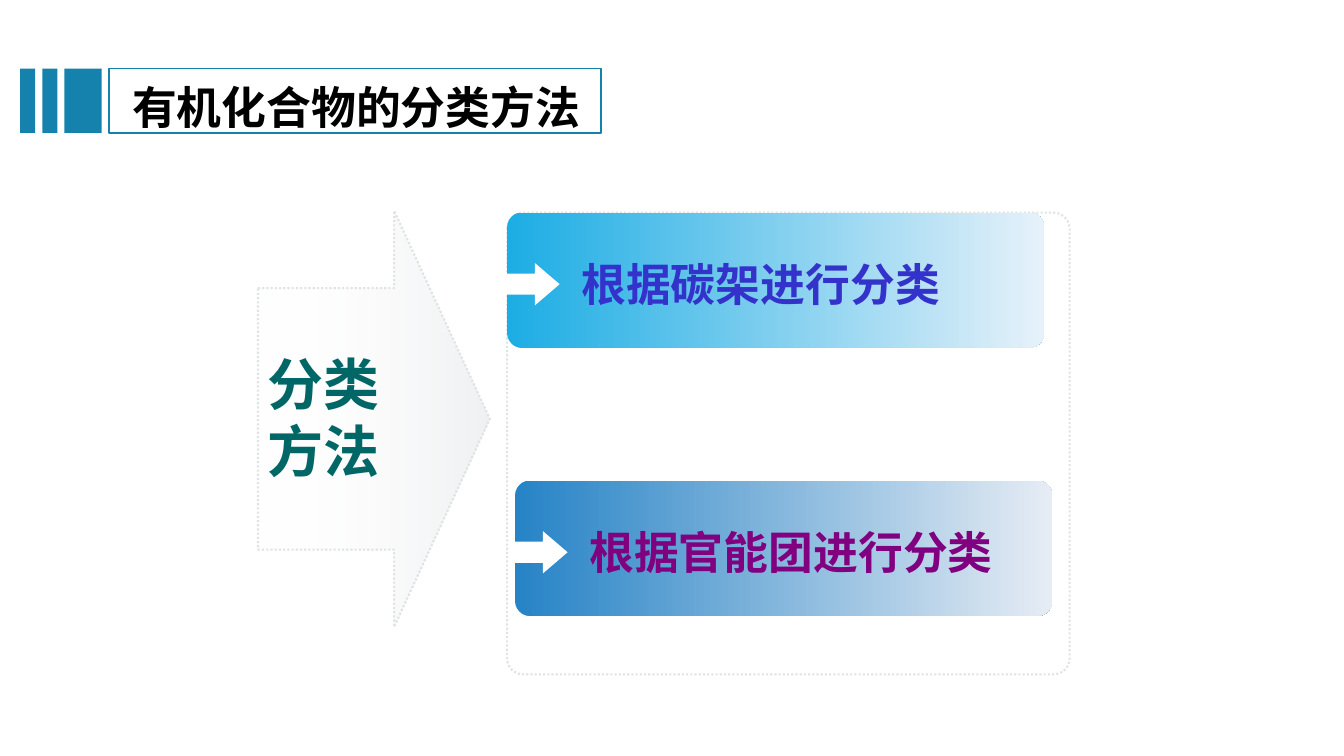
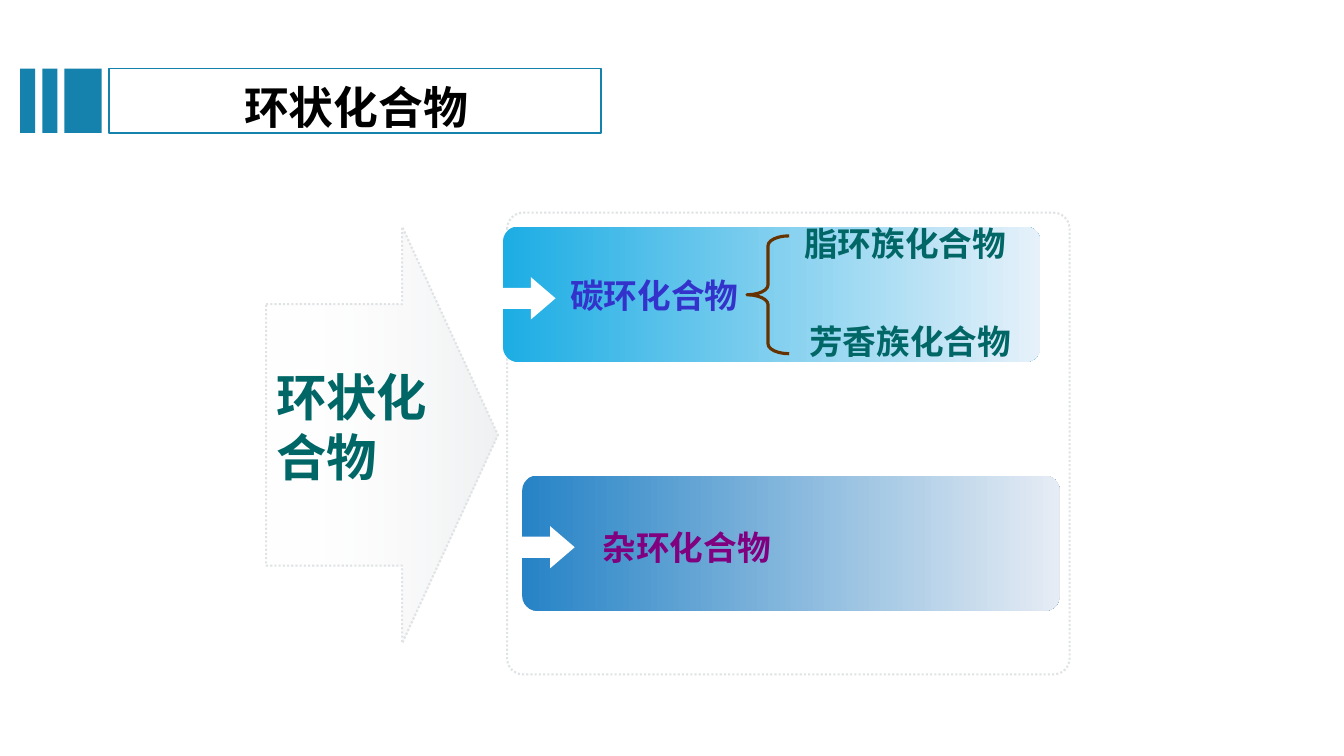
"""Build two slides on how organic compounds are classified."""
from dataclasses import dataclass

from lxml.etree import SubElement
from pptx import Presentation
from pptx.dml.color import RGBColor as Color
from pptx.enum.dml import MSO_LINE as Dash
from pptx.enum.shapes import MSO_SHAPE as Kind
from pptx.enum.text import MSO_ANCHOR as Anchor, MSO_AUTO_SIZE as AutoSize, PP_ALIGN as Align
from pptx.oxml.ns import qn
from pptx.util import Pt


@dataclass(frozen=True)
class Theme:
    font: str = "Arial"
    band: str = "1482AC"
    title: str = "000000"
    white: str = "FFFFFF"
    outline: str = "DFE3E5"
    teal: str = "006666"
    brace: str = "663300"
    card_gradients: tuple = (("1CADE4", "E6F1FA"), ("2683C6", "E6ECF4"))
    card_texts: tuple = ("3333CC", "800080")
    title_size: int = 32
    label_size: int = 24


THEME = Theme()


def write_text(shape, text, size, color, align=Align.LEFT, spacing=None, wrap=True):
    frame = shape.text_frame
    frame.text = text
    frame.word_wrap = wrap
    frame.auto_size = AutoSize.NONE
    frame.vertical_anchor = Anchor.TOP
    for paragraph in frame.paragraphs:
        paragraph.alignment = align
        if spacing:
            paragraph.line_spacing = spacing
        font = paragraph.runs[0].font
        font.name, font.size, font.bold = THEME.font, Pt(size), True
        font.color.rgb = Color.from_string(color)


def draw_shape(shapes, kind, box, fill=None, gradient=None, line=None, width=1.5, dash=None, adjust=()):
    shape = shapes.add_shape(kind, *map(Pt, box))
    shape.shadow.inherit = False
    for index, value in enumerate(adjust):
        shape.adjustments[index] = value
    if gradient:
        shape.fill.gradient()
        shape.fill.gradient_angle = 0
        for stop, color in zip(shape.fill.gradient_stops, gradient):
            stop.color.rgb = Color.from_string(color)
    elif fill:
        shape.fill.solid()
        shape.fill.fore_color.rgb = Color.from_string(fill)
    else:
        shape.fill.background()
    if line:
        shape.line.color.rgb = Color.from_string(line)
        shape.line.width = Pt(width)
        if dash:
            shape.line.dash_style = dash
    else:
        shape.line.fill.background()
    return shape


SLIDES = [
    {
        "title": "有机化合物的分类方法",
        "arrow": (184.3, 150.5, "分类\n方法", 40),
        "card_size": 32,
        "cards": [
            (362.2, 151.9, "根据碳架进行分类", 46, 28),
            (367.9, 343.4, "根据官能团进行分类", 46, 28),
        ],
        "branches": [],
    },
    {
        "title": "环状化合物",
        "arrow": (190.1, 162, "环状化合物", 36),
        "card_size": 24,
        "cards": [
            (359.3, 162, "碳环化合物", 41, 31),
            (373, 339.8, "杂环化合物", 50.4, 33),
        ],
        "branches": [(567.4, 155.5, "脂环族化合物"), (571, 225.4, "芳香族化合物")],
    },
]

presentation = Presentation()
presentation.slide_width, presentation.slide_height = Pt(960), Pt(540)

for content in SLIDES:
    slide = presentation.slides.add_slide(presentation.slide_layouts[5])

    title = slide.shapes.title
    title.left, title.top, title.width, title.height = map(Pt, (79.9, 45.4, 349.2, 49.7))
    write_text(title, content["title"], THEME.title_size, THEME.title, Align.CENTER, spacing=1.2)
    header = slide.shapes.add_group_shape().shapes
    draw_shape(header, Kind.RECTANGLE, (77.8, 49, 351.4, 46), line=THEME.band, width=1.25)
    for left, width in ((14.4, 10.8), (30.2, 10.8), (46.1, 26.6)):
        draw_shape(header, Kind.RECTANGLE, (left, 49, width, 46), fill=THEME.band)

    left, top, text, size = content["arrow"]
    topic = slide.shapes.add_group_shape().shapes
    arrow = draw_shape(topic, Kind.RIGHT_ARROW, (left, top, 165.6, 297.4),
                       gradient=(THEME.white, THEME.outline), line=THEME.outline,
                       dash=Dash.ROUND_DOT, adjust=(0.628, 0.413))
    stop_colors = arrow.fill._xPr.iter(qn("a:gs"))
    for stop, alpha in zip(stop_colors, ("0", "50000")):
        SubElement(stop[0], qn("a:alpha")).set("val", alpha)
    label = topic.add_textbox(Pt(left), Pt(top + 95.8), Pt(157.6), Pt(104))
    write_text(label, text, size, THEME.teal)

    draw_shape(slide.shapes, Kind.ROUNDED_RECTANGLE, (362.2, 151.9, 401.8, 329.8),
               line=THEME.outline, dash=Dash.ROUND_DOT, adjust=(0.035,))

    for card, gradient, color in zip(content["cards"], THEME.card_gradients, THEME.card_texts):
        left, top, text, indent, drop = card
        group = slide.shapes.add_group_shape().shapes
        draw_shape(group, Kind.ROUNDED_RECTANGLE, (left, top, 383.8, 96.5),
                   gradient=gradient, adjust=(0.109,))
        draw_shape(group, Kind.RIGHT_ARROW, (left - 4.3, top + 36, 41.8, 30.2),
                   fill=THEME.white, adjust=(0.5, 0.583))
        label = group.add_textbox(Pt(left + indent), Pt(top + drop), Pt(317.5), Pt(46))
        write_text(label, text, content["card_size"], color)

    if content["branches"]:
        draw_shape(slide.shapes, Kind.LEFT_BRACE, (533.5, 168.5, 30.2, 84.2),
                   line=THEME.brace, width=2.25, adjust=(0.233, 0.5))
    for left, top, text in content["branches"]:
        label = slide.shapes.add_textbox(Pt(left), Pt(top), Pt(159), Pt(36))
        write_text(label, text, THEME.label_size, THEME.teal, wrap=False)

presentation.save("out.pptx")
